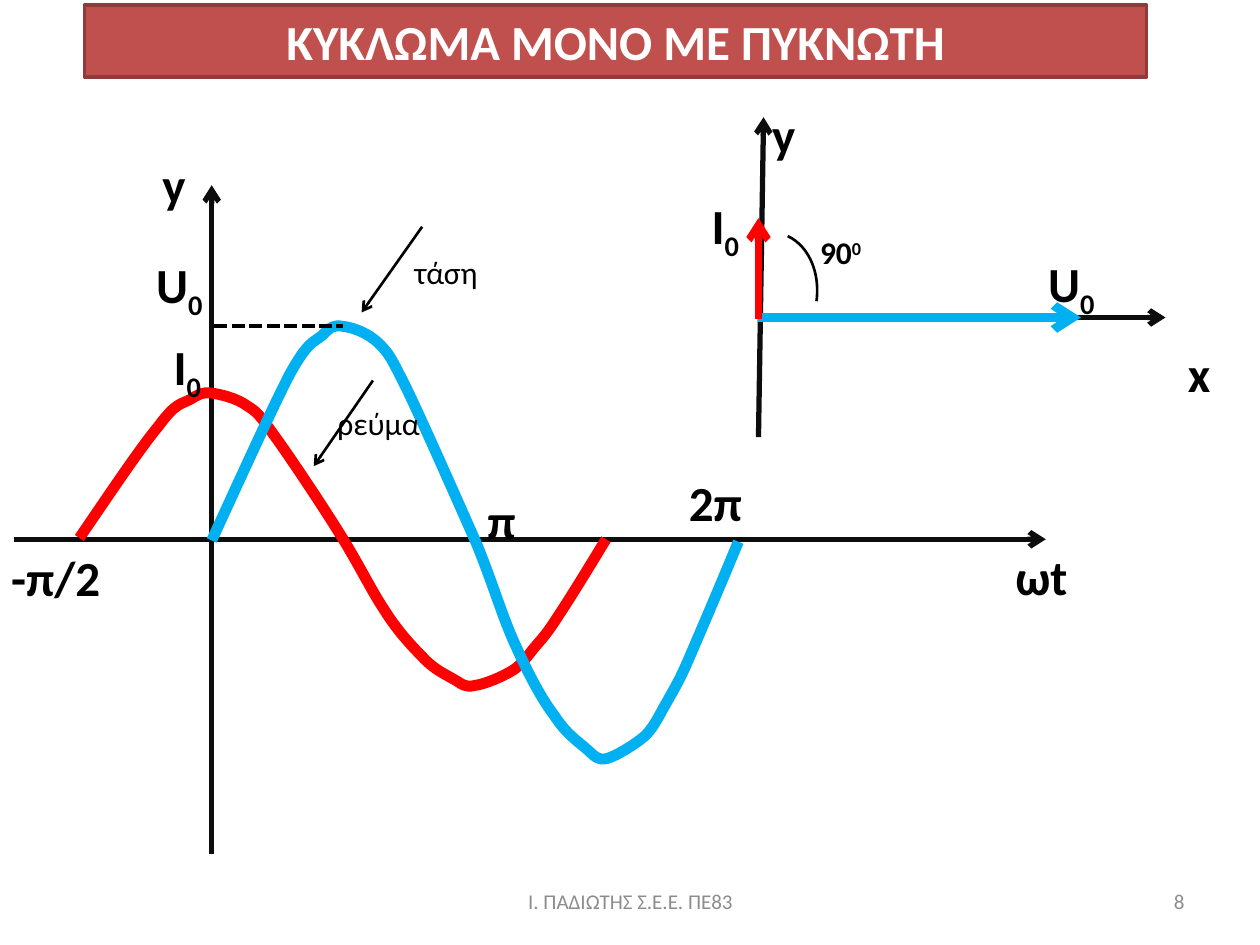
from lxml.etree import SubElement
from pptx import Presentation
from pptx.dml.color import RGBColor
from pptx.enum.dml import MSO_LINE
from pptx.enum.shapes import MSO_CONNECTOR, MSO_SHAPE
from pptx.enum.text import MSO_ANCHOR as Anchor, MSO_AUTO_SIZE as AutoSize, PP_ALIGN as Align
from pptx.oxml.ns import qn
from pptx.util import Inches, Pt

COLORS = {
    "axis": "0D0D0D",
    "text": "000000",
    "current": "FF0000",
    "voltage": "00B0F0",
    "banner": "C0504D",
    "banner_edge": "8E3B39",
    "white": "FFFFFF",
    "footer": "8C8C8C",
}

CURRENT_WAVE = [
    (0.63, 4.27),
    (0.87, 3.92), (1.11, 3.56), (1.26, 3.38),
    (1.4, 3.19), (1.44, 3.21), (1.51, 3.17),
    (1.58, 3.13), (1.6, 3.11), (1.68, 3.12),
    (1.75, 3.13), (1.88, 3.16), (1.96, 3.22),
    (2.04, 3.27), (2.05, 3.28), (2.18, 3.46),
    (2.31, 3.64), (2.59, 4.06), (2.73, 4.29),
    (2.87, 4.52), (2.95, 4.69), (3.05, 4.84),
    (3.15, 5), (3.26, 5.12), (3.35, 5.21),
    (3.44, 5.31), (3.53, 5.35), (3.6, 5.39),
    (3.67, 5.43), (3.69, 5.46), (3.77, 5.44),
    (3.85, 5.43), (3.99, 5.37), (4.07, 5.32),
    (4.15, 5.27), (4.19, 5.2), (4.25, 5.13),
    (4.31, 5.06), (4.34, 5.03), (4.43, 4.89),
    (4.53, 4.74), (4.67, 4.51), (4.81, 4.28),
]
VOLTAGE_WAVE = [
    (1.68, 4.29),
    (1.92, 3.77), (2.16, 3.24), (2.3, 2.97),
    (2.45, 2.7), (2.49, 2.72), (2.56, 2.66),
    (2.63, 2.59), (2.65, 2.58), (2.72, 2.59),
    (2.8, 2.6), (2.92, 2.64), (3.01, 2.73),
    (3.09, 2.81), (3.1, 2.83), (3.23, 3.09),
    (3.36, 3.36), (3.63, 3.97), (3.78, 4.31),
    (3.92, 4.65), (3.99, 4.91), (4.1, 5.14),
    (4.2, 5.36), (4.3, 5.55), (4.4, 5.68),
    (4.49, 5.82), (4.58, 5.88), (4.65, 5.94),
    (4.72, 6), (4.74, 6.04), (4.82, 6.02),
    (4.89, 6), (5.04, 5.91), (5.12, 5.84),
    (5.2, 5.76), (5.24, 5.66), (5.3, 5.56),
    (5.36, 5.45), (5.39, 5.41), (5.48, 5.2),
    (5.57, 4.99), (5.72, 4.64), (5.86, 4.3),
]


def rgb(name):
    return RGBColor.from_string(COLORS[name])


def style_line(line, color, width):
    line.color.rgb = rgb(color)
    line.width = Pt(width)


def write_text(shape, text, script="", baseline=-25, size=28, bold=True, color="text",
               align=Align.LEFT, anchor=Anchor.TOP, wrap=True, grow=True):
    frame = shape.text_frame
    frame.word_wrap = wrap
    frame.auto_size = AutoSize.SHAPE_TO_FIT_TEXT if grow else AutoSize.NONE
    frame.vertical_anchor = anchor
    paragraph = frame.paragraphs[0]
    paragraph.alignment = align
    for content, shift in ((text, 0), (script, baseline)):
        if not content:
            continue
        run = paragraph.add_run()
        run.text = content
        run.font.name = "Calibri"
        run.font.size = Pt(size)
        run.font.bold = bold
        run.font.color.rgb = rgb(color)
        if shift:
            run._r.get_or_add_rPr().set("baseline", str(shift * 1000))


def add_label(slide, box, text, **style):
    shape = slide.shapes.add_textbox(*map(Inches, box))
    write_text(shape, text, **style)


def add_line(slide, start, end, color="axis", width=3, arrow=True, dash=None):
    connector = slide.shapes.add_connector(
        MSO_CONNECTOR.STRAIGHT, *map(Inches, start + end))
    style_line(connector.line, color, width)
    if dash:
        connector.line.dash_style = dash
    if arrow:
        SubElement(connector.line._get_or_add_ln(), qn("a:tailEnd"), type="arrow")
    SubElement(connector._element.spPr, qn("a:effectLst"))


def add_wave(slide, points, color):
    start, *rest = [(Inches(x), Inches(y)) for x, y in points]
    builder = slide.shapes.build_freeform(*start)
    builder.add_line_segments(rest, close=False)
    shape = builder.convert_to_shape()
    outline = next(shape._element.iter(qn("a:path")))
    segments = outline.findall(qn("a:lnTo"))
    for index in range(0, len(segments), 3):
        curve = SubElement(outline, qn("a:cubicBezTo"))
        for segment in segments[index:index + 3]:
            curve.append(segment[0])
            outline.remove(segment)
    shape.fill.background()
    shape.shadow.inherit = False
    style_line(shape.line, color, 6.25)


def add_angle_arc(slide):
    arc = slide.shapes.add_shape(MSO_SHAPE.ARC, *map(Inches, (5.67, 1.84, 0.81, 1.04)))
    arc.adjustments[0] = 166.65
    arc.adjustments[1] = 211.236
    arc.rotation = 12.3
    arc.fill.background()
    arc.shadow.inherit = False
    style_line(arc.line, "text", 1.5)


def add_banner(slide, text):
    banner = slide.shapes.add_shape(
        MSO_SHAPE.RECTANGLE, *map(Inches, (0.67, 0.04, 8.43, 0.57)))
    banner.fill.solid()
    banner.fill.fore_color.rgb = rgb("banner")
    banner.shadow.inherit = False
    style_line(banner.line, "banner_edge", 2)
    write_text(banner, text, color="white", align=Align.CENTER)


def add_waveforms(slide):
    add_line(slide, (1.68, 6.78), (1.68, 1.47))
    add_line(slide, (0.11, 4.28), (8.3, 4.28))
    add_wave(slide, CURRENT_WAVE, "current")
    add_wave(slide, VOLTAGE_WAVE, "voltage")
    add_line(slide, (1.7, 2.59), (2.72, 2.59), "text", 2.5,
             arrow=False, dash=MSO_LINE.SQUARE_DOT)
    add_line(slide, (3.35, 1.8), (2.87, 2.48), "text", 1.5)
    add_line(slide, (2.96, 3.02), (2.49, 3.7), "text", 1.5)
    add_label(slide, (1.19, 1.18, 0.45, 0.57), "y")
    add_label(slide, (7.96, 4.29, 0.62, 0.57), "ωt", wrap=False)
    add_label(slide, (1.14, 1.97, 0.71, 0.57), "U", script="0")
    add_label(slide, (1.28, 2.62, 0.71, 0.57), "I", script="0")
    add_label(slide, (-0.01, 4.3, 1.14, 0.57), "-π/2")
    add_label(slide, (3.77, 3.84, 0.87, 0.57), "π")
    add_label(slide, (5.37, 3.7, 0.87, 0.57), "2π")
    add_label(slide, (3.19, 1.96, 0.71, 0.4), "τάση", size=18, bold=False)
    add_label(slide, (2.58, 3.16, 0.86, 0.4), "ρεύμα", size=18, bold=False, wrap=False)


def add_phasors(slide):
    add_line(slide, (6.02, 3.47), (6.06, 0.93))
    add_line(slide, (6.02, 2.52), (9.25, 2.52))
    add_line(slide, (6.02, 2.52), (8.58, 2.52), "voltage", 5)
    add_line(slide, (6.02, 2.53), (6.02, 1.73), "current", 4)
    add_angle_arc(slide)
    add_label(slide, (6.03, 0.78, 0.45, 0.57), "y")
    add_label(slide, (9.33, 2.68, 0.39, 0.57), "x", wrap=False)
    add_label(slide, (8.22, 1.96, 0.71, 0.57), "U", script="0")
    add_label(slide, (5.55, 1.5, 0.71, 0.57), "I", script="0")
    add_label(slide, (6.41, 1.8, 0.89, 0.4), "90", script="0", baseline=30, size=18)


def add_footer(slide):
    style = dict(size=12, bold=False, color="footer", anchor=Anchor.MIDDLE, grow=False)
    add_label(slide, (3.42, 6.95, 3.17, 0.4), "Ι. ΠΑΔΙΩΤΗΣ Σ.Ε.Ε. ΠΕ83",
              align=Align.CENTER, **style)
    add_label(slide, (7.17, 6.95, 2.33, 0.4), "8", align=Align.RIGHT, **style)


def main():
    presentation = Presentation()
    presentation.slide_width = Inches(10)
    presentation.slide_height = Inches(7.5)
    slide = presentation.slides.add_slide(presentation.slide_layouts[6])
    add_waveforms(slide)
    add_phasors(slide)
    add_banner(slide, "ΚΥΚΛΩΜΑ ΜΟΝΟ ΜΕ ΠΥΚΝΩΤΗ")
    add_footer(slide)
    presentation.save("out.pptx")


if __name__ == "__main__":
    main()
